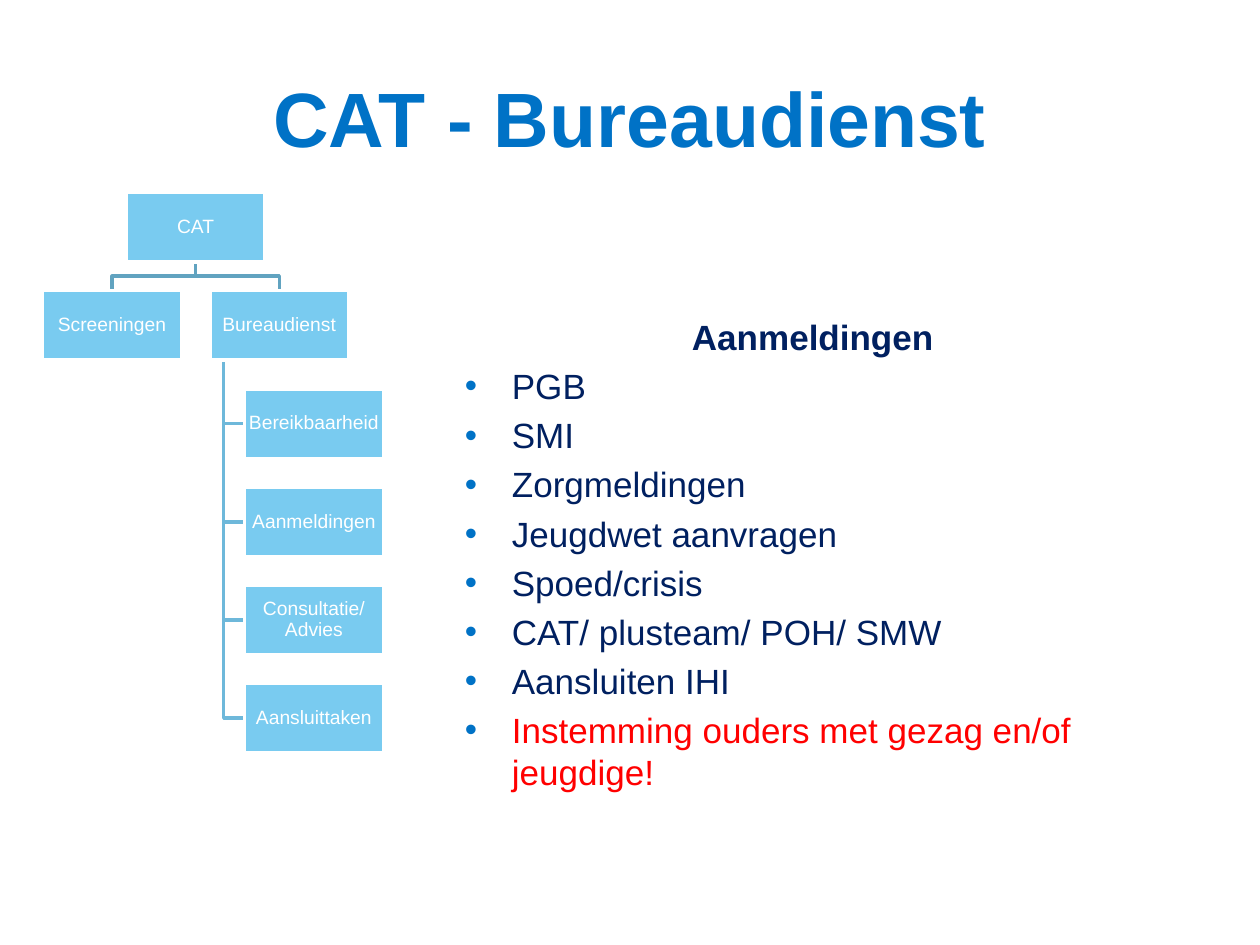
from lxml.etree import SubElement
from pptx import Presentation
from pptx.dml.color import RGBColor
from pptx.enum.shapes import MSO_SHAPE
from pptx.enum.text import MSO_ANCHOR, PP_ALIGN
from pptx.oxml.ns import qn
from pptx.util import Cm, Pt

COLORS = {
    "title": "0072C6", "text": "002060", "alert": "FF0000", "white": "FFFFFF",
    "box": "79CBF0", "branch": "61A3C0", "twig": "6EB8DA",
}
FONT = "Arial"
TITLE = "CAT - Bureaudienst"
HEADING = "Aanmeldingen"
BULLETS = [
    ("PGB", "text"),
    ("SMI", "text"),
    ("Zorgmeldingen", "text"),
    ("Jeugdwet aanvragen", "text"),
    ("Spoed/crisis", "text"),
    ("CAT/ plusteam/ POH/ SMW", "text"),
    ("Aansluiten IHI", "text"),
    ("Instemming ouders met gezag en/of jeugdige!", "alert"),
]
ROOT = "CAT"
DEPARTMENTS = ["Screeningen", "Bureaudienst"]
TASKS = ["Bereikbaarheid", "Aanmeldingen", "Consultatie/ Advies", "Aansluittaken"]

CHART_LEFT, CHART_TOP = 0.86, 3.88
BOX_W, BOX_H = 2.8, 1.4
COLUMN_STEP, ROW_STEP = 3.37, 1.98
TASK_INDENT, TRUNK_INDENT = BOX_W / 4, BOX_W / 10


def color(name):
    return RGBColor.from_string(COLORS[name])


def add_span(para, text, size, tint, bold=False):
    span = para.add_run()
    span.text = text
    span.font.name = FONT
    span.font.size = Pt(size)
    span.font.bold = bold
    span.font.color.rgb = color(tint)


def add_bullet(para):
    props = para._p.get_or_add_pPr()
    props.set("marL", str(Cm(0.95)))
    props.set("indent", str(-Cm(0.95)))
    SubElement(SubElement(props, qn("a:buClr")), qn("a:srgbClr"), val=COLORS["title"])
    SubElement(props, qn("a:buFont"), typeface=FONT)
    SubElement(props, qn("a:buChar"), char="•")


def add_line(chart, points, tint):
    start, *rest = [(Cm(x), Cm(y)) for x, y in points]
    builder = chart.shapes.build_freeform(*start)
    builder.add_line_segments(rest, close=False)
    line = builder.convert_to_shape()
    line.shadow.inherit = False
    line.fill.background()
    line.line.color.rgb = color(tint)
    line.line.width = Pt(2)


def add_box(chart, text, left, top):
    box = chart.shapes.add_shape(MSO_SHAPE.RECTANGLE, Cm(left), Cm(top), Cm(BOX_W), Cm(BOX_H))
    box.shadow.inherit = False
    box.fill.solid()
    box.fill.fore_color.rgb = color("box")
    box.line.color.rgb = color("white")
    box.line.width = Pt(2)
    frame = box.text_frame
    frame.word_wrap = True
    frame.vertical_anchor = MSO_ANCHOR.MIDDLE
    frame.margin_left = frame.margin_right = frame.margin_top = frame.margin_bottom = Cm(0.02)
    para = frame.paragraphs[0]
    para.alignment = PP_ALIGN.CENTER
    para.line_spacing = 0.9
    add_span(para, text, 11, "white")


def add_title(page):
    title = page.shapes.title
    title.left, title.top, title.width, title.height = Cm(1.27), Cm(0.76), Cm(22.86), Cm(3.18)
    title.text_frame.vertical_anchor = MSO_ANCHOR.MIDDLE
    para = title.text_frame.paragraphs[0]
    para.alignment = PP_ALIGN.CENTER
    add_span(para, TITLE, 44, "title", bold=True)


def add_list(page):
    frame = page.shapes.add_textbox(Cm(9.12), Cm(6.17), Cm(14.53), Cm(9.07)).text_frame
    frame.word_wrap = True
    frame.margin_top = Cm(0.2)
    heading = frame.paragraphs[0]
    heading.alignment = PP_ALIGN.CENTER
    add_span(heading, HEADING, 20, "text", bold=True)
    for text, tint in BULLETS:
        para = frame.add_paragraph()
        add_bullet(para)
        para.space_before = Pt(4)
        add_span(para, text, 20, tint)


def add_org_chart(page):
    chart = page.shapes.add_group_shape()
    rows = [CHART_TOP + i * ROW_STEP for i in range(2 + len(TASKS))]
    columns = [CHART_LEFT + i * COLUMN_STEP for i in range(len(DEPARTMENTS))]
    root_left = sum(columns) / len(columns)
    task_left = columns[-1] + TASK_INDENT
    trunk = columns[-1] + TRUNK_INDENT

    for top in reversed(rows[2:]):
        middle = top + BOX_H / 2
        add_line(chart, [(trunk, rows[1] + BOX_H), (trunk, middle), (task_left, middle)], "twig")
    start = root_left + BOX_W / 2
    root_bottom = rows[0] + BOX_H
    bend = (root_bottom + rows[1]) / 2
    for left in reversed(columns):
        end = left + BOX_W / 2
        add_line(chart, [(start, root_bottom), (start, bend), (end, bend), (end, rows[1])], "branch")

    add_box(chart, ROOT, root_left, rows[0])
    for text, left in zip(DEPARTMENTS, columns):
        add_box(chart, text, left, rows[1])
    for text, top in zip(TASKS, rows[2:]):
        add_box(chart, text, task_left, top)


def main():
    """Build the CAT - Bureaudienst slide."""
    deck = Presentation()
    deck.slide_width, deck.slide_height = Cm(25.4), Cm(19.05)
    page = deck.slides.add_slide(deck.slide_layouts[5])
    add_title(page)
    add_list(page)
    add_org_chart(page)
    deck.save("out.pptx")


if __name__ == "__main__":
    main()
